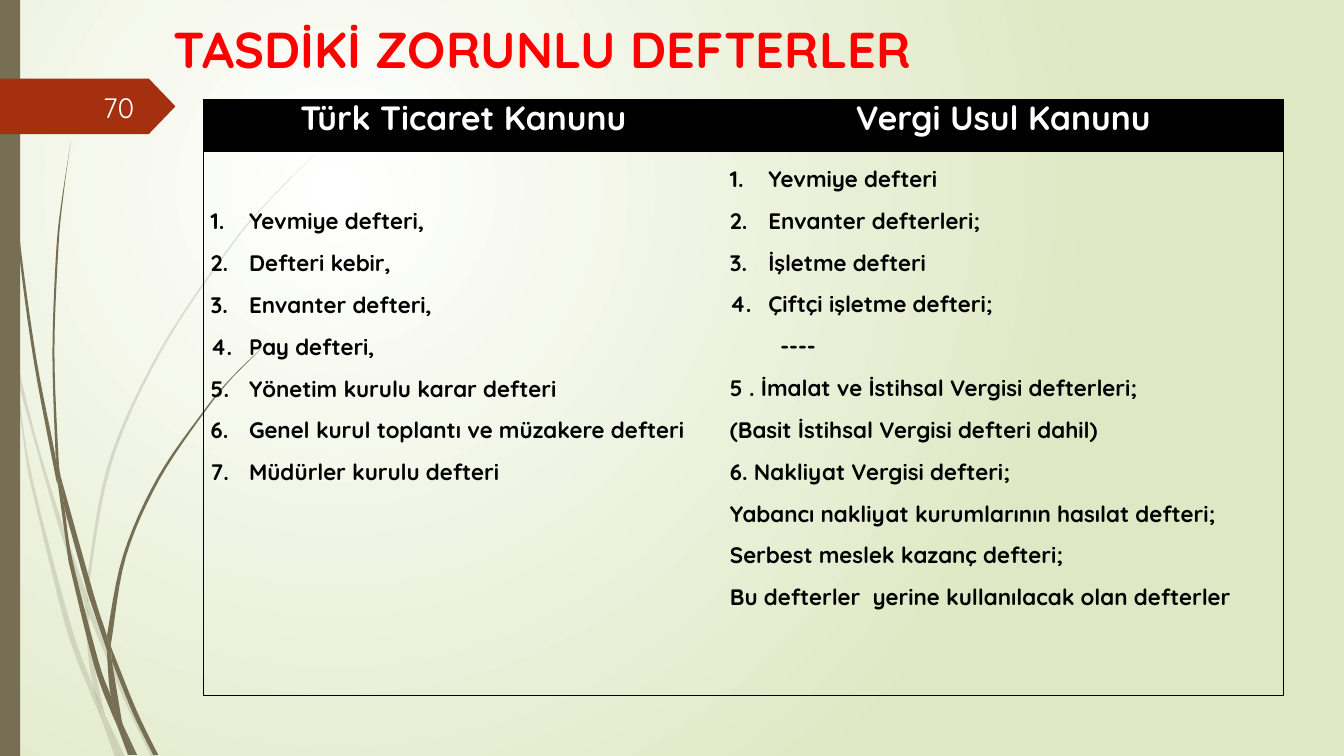
from lxml.etree import SubElement
from pptx import Presentation
from pptx.dml.color import RGBColor
from pptx.enum.shapes import MSO_SHAPE
from pptx.enum.text import MSO_ANCHOR, PP_ALIGN
from pptx.oxml import parse_xml
from pptx.oxml.ns import nsdecls, qn
from pptx.util import Pt

PX = 9144
FONT = "Quicksand"
OLIVE = "766F54"
PALE = [
    ([(11, 350), (9, 322), (0, 282)], [(0, 299), (10, 344)]),
    ([(14, 345), (35, 432), (62, 520), (85, 586)],
     [(84, 599), (58, 522), (17, 376)]),
    ([(88, 596), (92, 607), (127, 692), (155, 751)],
     [(150, 751), (123, 694), (88, 610)]),
    ([(105, 711), (124, 751)], [(119, 751)]),
    ([(11, 350), (17, 376), (31, 469), (70, 619), (93, 683), (101, 714)],
     [(92, 693), (65, 621), (28, 470)]),
    ([(84, 599), (87, 646), (93, 683), (105, 711)],
     [(103, 706), (91, 646), (88, 608)]),
    ([(312, 153), (268, 197), (228, 244), (158, 348), (107, 461), (85, 584)],
     [(88, 596), (88, 584), (110, 462), (160, 349), (229, 245), (268, 198)]),
    ([(101, 714), (114, 751)], [(119, 751)]),
    ([(85, 586), (84, 599)], [(88, 610), (88, 596)]),
    ([(93, 683), (105, 711), (119, 751)], [(101, 714), (99, 707)]),
]
DARK = [
    ([(4, 0), (8, 109), (19, 232), (36, 355), (55, 453), (57, 481)],
     [(56, 477), (33, 355), (17, 233), (7, 110), (3, 0)]),
    ([(60, 472), (93, 590), (106, 631), (106, 645)], [(88, 592), (64, 505)]),
    ([(110, 641), (113, 649), (136, 706), (157, 749)],
     [(152, 749), (132, 708), (111, 656)]),
    ([(57, 477), (64, 505), (72, 556), (98, 657), (110, 691), (117, 722)],
     [(111, 708), (93, 659), (68, 557)]),
    ([(70, 141), (63, 193), (58, 245), (54, 349), (58, 453), (60, 472)],
     [(55, 449), (52, 349), (56, 245), (62, 193)]),
    ([(122, 719), (136, 749)], [(133, 749)]),
    ([(55, 449), (60, 472), (64, 505)], [(57, 477)]),
    ([(261, 344), (231, 373), (204, 405), (156, 474), (122, 551), (106, 631)],
     [(110, 641), (111, 633), (125, 552), (158, 476), (205, 406), (231, 374)]),
    ([(117, 722), (127, 749)], [(131, 749)]),
    ([(106, 645), (110, 691), (122, 719)], [(121, 716), (111, 656)]),
    ([(106, 631), (106, 645)], [(111, 656), (110, 641)]),
    ([(110, 691), (122, 719), (133, 749)], [(130, 749), (117, 722)]),
]
HEADS = ["Türk Ticaret Kanunu", "Vergi Usul Kanunu"]
TRADE = ["Yevmiye defteri,", "Defteri kebir,", "Envanter defteri,",
         "Pay defteri,", "Yönetim kurulu karar defteri",
         "Genel kurul toplantı ve müzakere defteri",
         "Müdürler kurulu defteri"]
TAX = ["Yevmiye defteri", "Envanter defterleri;", "İşletme defteri",
       "Çiftçi işletme defteri;"]
DASH = "----"
MORE = ["5 . İmalat ve İstihsal Vergisi defterleri;",
        "(Basit İstihsal Vergisi defteri dahil)",
        "6. Nakliyat Vergisi defteri;",
        "Yabancı nakliyat kurumlarının hasılat defteri;",
        "Serbest meslek kazanç defteri;",
        "Bu defterler  yerine kullanılacak olan defterler"]


def px(*vals):
    return [round(v * PX) for v in vals]


def tint(color, code):
    color.rgb = RGBColor.from_string(code)


def paint(shape, code, alpha=100):
    shape.shadow.inherit = False
    shape.line.fill.background()
    shape.fill.solid()
    tint(shape.fill.fore_color, code)
    if alpha < 100:
        tone = shape.element.spPr.find(".//" + qn("a:srgbClr"))
        SubElement(tone, qn("a:alpha")).set("val", str(alpha * 1000))


def backdrop(slide):
    fill = slide.background.fill
    fill.gradient()
    for stop, code, pos in zip(fill.gradient_stops, ["FFFFFF", "DFE8C4"], [0, 1]):
        tint(stop.color, code)
        stop.position = pos
    line = next(slide.element.iter(qn("a:lin")))
    line.getparent().replace(line, parse_xml(
        f'<a:path {nsdecls("a")} path="circle"><a:fillToRect l="50000" '
        't="50000" r="100000" b="100000"/></a:path>'))


def smooth(knots, steps=6):
    ends = [knots[0], *knots, knots[-1]]
    curve = []
    for a, b, c, d in zip(ends, ends[1:], ends[2:], ends[3:]):
        for t in (n / steps for n in range(steps)):
            curve.append(tuple(
                (2 * q + (r - p) * t + (2 * p - 5 * q + 4 * r - s) * t ** 2
                 + (3 * q - p - 3 * r + s) * t ** 3) / 2
                for p, q, r, s in zip(a, b, c, d)))
    return curve + [knots[-1]]


def strands(slide, blades, alpha):
    tuft = slide.shapes.add_group_shape()
    for down, back in blades:
        dots = [px(*dot) for dot in smooth(down) + smooth(back)]
        pen = tuft.shapes.build_freeform(*dots[0])
        pen.add_line_segments(dots[1:], close=True)
        paint(pen.convert_to_shape(), OLIVE, alpha)


def block(slide, kind, box, code):
    shape = slide.shapes.add_shape(kind, *px(*box))
    paint(shape, code)
    return shape


def write(para, text, size, code, bold=True, align=PP_ALIGN.LEFT):
    para.text = text
    para.alignment = align
    font = para.font
    font.name, font.size, font.bold = FONT, Pt(size), bold
    tint(font.color, code)


def label(slide, box, text, size, code, bold, align, anchor):
    frame = slide.shapes.add_textbox(*px(*box)).text_frame
    frame.word_wrap = True
    frame.vertical_anchor = anchor
    write(frame.paragraphs[0], text, size, code, bold, align)


def indent(para, left, hang=0):
    props = para._p.get_or_add_pPr()
    props.set("marL", str(left * PX))
    props.set("indent", str(-hang * PX))
    return props


def fill_list(cell, lines, count):
    frame = cell.text_frame
    for num, text in enumerate(lines):
        para = frame.add_paragraph() if num else frame.paragraphs[0]
        write(para, text, 16, "000000", align=PP_ALIGN.JUSTIFY)
        para.line_spacing = 1.5
        if num < count:
            props = indent(para, 38, 38)
            mark = parse_xml(f'<a:buAutoNum {nsdecls("a")} type="arabicPeriod"/>')
            props.find(qn("a:defRPr")).addprevious(mark)
        elif text == DASH:
            indent(para, 50)


def edge(cell, sides):
    props = cell._tc.get_or_add_tcPr()
    for num, side in enumerate("LRTB"):
        ink = ('<a:solidFill><a:srgbClr val="000000"/></a:solidFill>'
               if side in sides else "<a:noFill/>")
        props.insert(num, parse_xml(
            f'<a:ln{side} {nsdecls("a")} w="9525">{ink}</a:ln{side}>'))


def ledger(slide):
    table = slide.shapes.add_table(2, 2, *px(202, 99, 1071, 591)).table
    table.first_row = table.horz_banding = False
    for col, wide in zip(table.columns, px(515, 556)):
        col.width = wide
    for row, high in zip(table.rows, px(51, 540)):
        row.height = high
    for num, text in enumerate(HEADS):
        head, body = (table.cell(row, num) for row in range(2))
        for cell, top in ((head, 19), (body, 0 if num else 42)):
            cell.margin_left, cell.margin_right = px(7, 7)
            cell.margin_top, cell.margin_bottom = px(top, 0)
        para = head.text_frame.paragraphs[0]
        write(para, text, 24, "FFFFFF", align=PP_ALIGN.CENTER)
        para.line_spacing = Pt(14)
        head.fill.solid()
        tint(head.fill.fore_color, "000000")
        edge(head, "T" + "LR"[num])
        body.fill.background()
        edge(body, "TB" + "LR"[num])
    fill_list(table.cell(1, 0), TRADE, len(TRADE))
    fill_list(table.cell(1, 1), TAX + [DASH] + MORE, len(TAX))


def main():
    deck = Presentation()
    deck.slide_width, deck.slide_height = px(1333, 750)
    slide = deck.slides.add_slide(deck.slide_layouts[6])
    backdrop(slide)
    strands(slide, PALE, 20)
    strands(slide, DARK, 100)
    block(slide, MSO_SHAPE.RECTANGLE, (0, 0, 20, 750), OLIVE)
    flag = block(slide, MSO_SHAPE.PENTAGON, (0, 78, 174, 55), "A53010")
    flag.adjustments[0] = 0.48
    label(slide, (162, 13, 1096, 87), "TASDİKİ ZORUNLU DEFTERLER", 36,
          "FF0000", True, PP_ALIGN.LEFT, MSO_ANCHOR.TOP)
    label(slide, (58, 86, 85, 40), "70", 20, "FEFFFF", False,
          PP_ALIGN.RIGHT, MSO_ANCHOR.MIDDLE)
    ledger(slide)
    deck.save("out.pptx")


if __name__ == "__main__":
    main()
